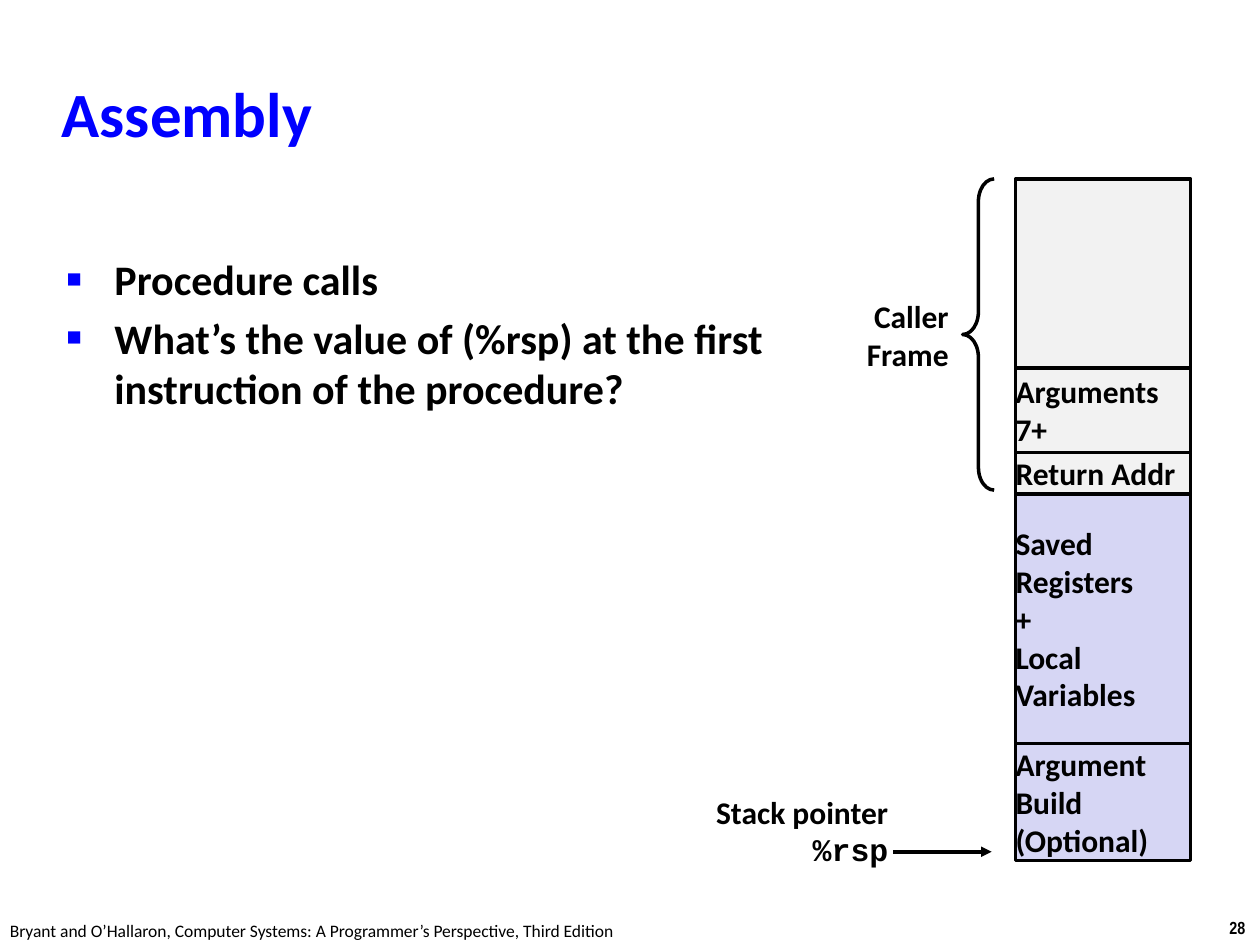
from lxml.etree import SubElement
from pptx import Presentation
from pptx.dml.color import RGBColor
from pptx.enum.shapes import MSO_CONNECTOR as CONNECTOR, MSO_SHAPE as SHAPE
from pptx.enum.text import MSO_ANCHOR as ANCHOR, PP_ALIGN as ALIGN
from pptx.oxml.ns import qn
from pptx.util import Inches, Pt

BLACK = RGBColor(0x00, 0x00, 0x00)
BLUE = RGBColor(0x00, 0x00, 0xFF)
GRAY = RGBColor(0xF2, 0xF2, 0xF2)
LAVENDER = RGBColor(0xD6, 0xD6, 0xF4)

TITLE = "Assembly"
BULLETS = [
    "Procedure calls",
    "What’s the value of (%rsp) at the first instruction of the procedure?",
]
FOOTER = "Bryant and O’Hallaron, Computer Systems: A Programmer’s Perspective, Third Edition"
PAGE_NUMBER = "28"
STACK = [
    ([], 1.5, GRAY),
    (["Arguments", "7+"], 0.67, GRAY),
    (["Return Addr"], 0.33, GRAY),
    (["Saved", "Registers", "+", "Local", "Variables"], 1.98, LAVENDER),
    (["Argument", "Build", "(Optional)"], 0.93, LAVENDER),
]
STACK_LEFT, STACK_TOP, STACK_WIDTH = 8.06, 1.42, 1.39
POINTER_Y = 6.76


def write(frame, lines, size=18, bold=True, font="Calibri", color=BLACK,
          align=ALIGN.LEFT, fonts=None):
    for index, line in enumerate(lines):
        paragraph = frame.paragraphs[0] if index == 0 else frame.add_paragraph()
        paragraph.alignment = align
        run = paragraph.add_run()
        run.text = line
        run.font.size = Pt(size)
        run.font.bold = bold
        run.font.name = (fonts or {}).get(line, font)
        run.font.color.rgb = color


def set_margins(frame, margin):
    frame.margin_left = frame.margin_right = Inches(margin)
    frame.margin_top = frame.margin_bottom = Inches(margin)


def add_text(slide, box, lines, wrap=False, margin=None, **style):
    frame = slide.shapes.add_textbox(*map(Inches, box)).text_frame
    frame.word_wrap = wrap
    if margin is not None:
        set_margins(frame, margin)
    write(frame, lines, **style)
    return frame


def add_outlined(slide, kind, box, fill=None):
    shape = slide.shapes.add_shape(kind, *map(Inches, box))
    shape.shadow.inherit = False
    if fill is None:
        shape.fill.background()
    else:
        shape.fill.solid()
        shape.fill.fore_color.rgb = fill
    shape.line.color.rgb = BLACK
    shape.line.width = Pt(2)
    return shape


def add_bullet(paragraph):
    paragraph.space_before = Pt(4.8)
    properties = paragraph._p.get_or_add_pPr()
    properties.set("marL", str(Inches(0.38)))
    properties.set("indent", str(-Inches(0.38)))
    color = SubElement(properties, qn("a:buClr"))
    SubElement(color, qn("a:srgbClr"), val=str(BLUE))
    SubElement(properties, qn("a:buSzPct"), val="60000")
    SubElement(properties, qn("a:buFont"), typeface="Arial")
    SubElement(properties, qn("a:buChar"), char="■")


def add_arrow(slide, start, end, y):
    arrow = slide.shapes.add_connector(
        CONNECTOR.STRAIGHT, Inches(start), Inches(y), Inches(end), Inches(y))
    arrow.line.color.rgb = BLACK
    arrow.line.width = Pt(2)
    SubElement(arrow.line._get_or_add_ln(), qn("a:tailEnd"), type="triangle")
    SubElement(arrow._element.spPr, qn("a:effectLst"))


def add_stack(slide):
    top = STACK_TOP
    for lines, height, fill in STACK:
        block = add_outlined(slide, SHAPE.RECTANGLE,
                             (STACK_LEFT, top, STACK_WIDTH, height), fill)
        frame = block.text_frame
        set_margins(frame, 0)
        frame.vertical_anchor = ANCHOR.MIDDLE
        write(frame, lines)
        top += height


def main():
    presentation = Presentation()
    presentation.slide_width, presentation.slide_height = Inches(10), Inches(7.5)
    slide = presentation.slides.add_slide(presentation.slide_layouts[5])

    title = slide.shapes.title
    title.left, title.top = Inches(0.39), Inches(0.48)
    title.width, title.height = Inches(8.3), Inches(0.83)
    title.text_frame.vertical_anchor = ANCHOR.MIDDLE
    write(title.text_frame, [TITLE], size=36, color=BLUE)

    body = add_text(slide, (0.43, 1.49, 6.15, 2.43), BULLETS, wrap=True, size=24)
    body.margin_top = Inches(0.52)
    for paragraph in body.paragraphs:
        add_bullet(paragraph)

    add_stack(slide)

    add_text(slide, (6.82, 2.32, 0.75, 0.69), ["Caller", "Frame"],
             margin=0.04, align=ALIGN.RIGHT)
    brace = add_outlined(slide, SHAPE.LEFT_BRACE, (7.64, STACK_TOP, 0.25, 2.47))
    brace.adjustments[0] = 0.72

    add_text(slide, (5.47, 6.25, 1.62, 0.67), ["Stack pointer", "%rsp"],
             wrap=True, margin=0.04, align=ALIGN.RIGHT, fonts={"%rsp": "Courier New"})
    add_arrow(slide, 7.09, 7.87, POINTER_Y)

    add_text(slide, (-0.02, 7.25, 5.08, 0.27), [FOOTER], size=10, bold=False)
    add_text(slide, (9.66, 7.23, 0.34, 0.27), [PAGE_NUMBER], size=10, font="Arial Narrow")

    presentation.save("out.pptx")


if __name__ == "__main__":
    main()
